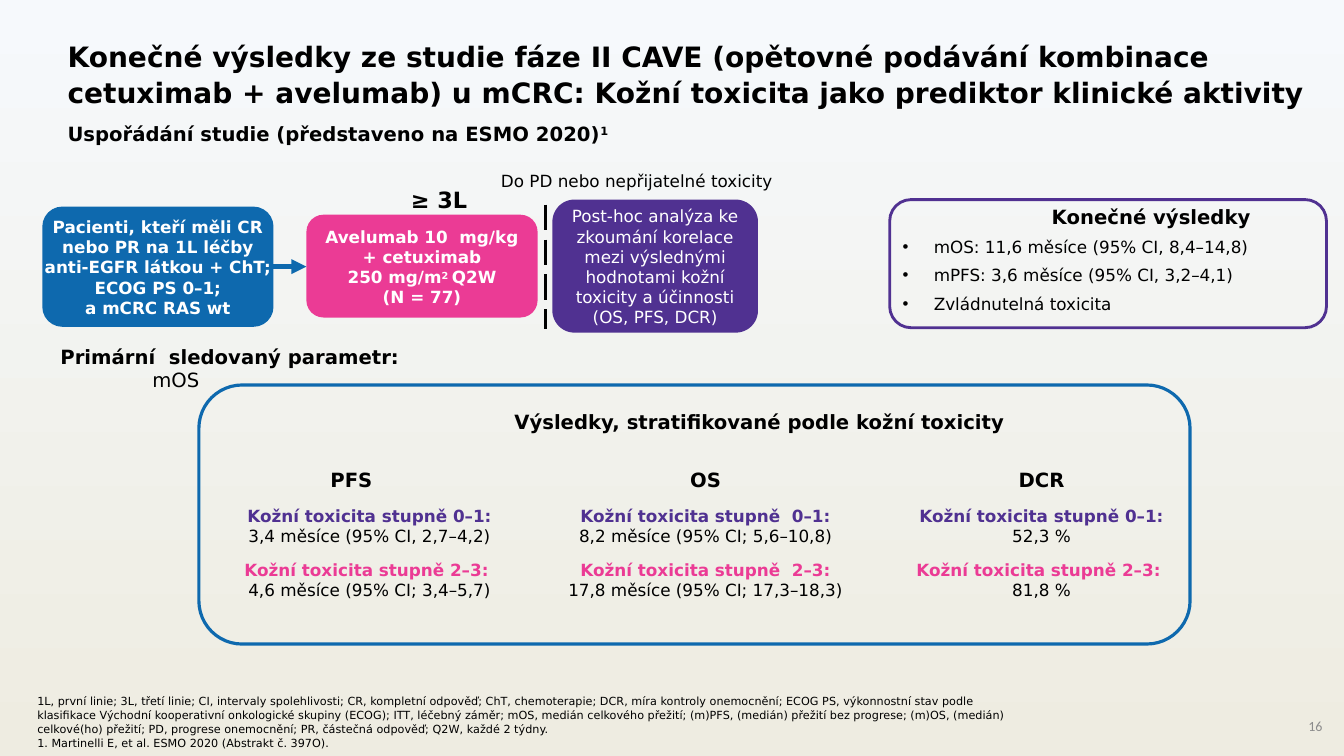
from dataclasses import dataclass
from lxml.etree import SubElement
from pptx import Presentation
from pptx.dml.color import RGBColor
from pptx.enum.dml import MSO_LINE
from pptx.enum.shapes import MSO_CONNECTOR, MSO_SHAPE as SHAPE
from pptx.enum.text import MSO_ANCHOR as ANCHOR, MSO_AUTO_SIZE, PP_ALIGN as ALIGN
from pptx.oxml.ns import qn
from pptx.util import Inches, Pt


@dataclass(frozen=True)
class Theme:
    font: str = "DejaVu Sans"
    number_font: str = "Calibri"
    black: str = "000000"
    white: str = "FFFFFF"
    blue: str = "0E69AE"
    pink: str = "EB3B95"
    purple: str = "503191"
    grey: str = "8C8C8C"
    sky: str = "F6F9FC"
    sand: str = "EEECE1"
    title: int = 20
    label: int = 16
    heading: int = 14
    body: int = 12
    number: int = 10
    note: int = 8


THEME = Theme()

# Content: a tuple inside a paragraph is (superscript text, baseline in percent)
TITLE = ("Konečné výsledky ze studie fáze II CAVE (opětovné podávání kombinace "
         "cetuximab + avelumab) u mCRC: Kožní toxicita jako prediktor klinické aktivity")
SUBTITLE = ["Uspořádání studie (představeno na ESMO 2020)", ("1", 30)]
# Areas are left, top, width, height in percent of the slide
CARDS = [
    ((3.15, 27.33, 17.2, 15.9), THEME.blue, True,
     [["Pacienti, kteří měli CR\vnebo PR na 1L léčby\vanti-EGFR látkou + ChT;\vECOG PS 0–1;"],
      ["a mCRC RAS wt"]]),
    ((22.8, 28.4, 17.2, 13.6), THEME.pink, True,
     [["Avelumab 10  mg/kg"], ["+ cetuximab"], ["250 mg/m", ("2 ", 24), "Q2W"], ["(N = 77)"]]),
    ((41.1, 26.4, 15.3, 17.6), THEME.purple, False,
     [["Post-hoc analýza ke\vzkoumání korelace\vmezi výslednými\vhodnotami kožní\v"
       "toxicity a účinnosti\v(OS, PFS, DCR)"]]),
]
FRAMES = [((66.2, 26.4, 32.5, 16.95), THEME.purple, 2.04),
          ((14.8, 50.93, 73.75, 34.27), THEME.blue, 2.28)]
FINAL_RESULTS = ["mOS: 11,6 měsíce (95% CI, 8,4–14,8)",
                 "mPFS: 3,6 měsíce (95% CI, 3,2–4,1)",
                 "Zvládnutelná toxicita"]
# Name, mild label and value, severe label and value, right margin of the name
OUTCOMES = [
    ("PFS", "Kožní toxicita stupně 0–1:", "3,4 měsíce (95% CI, 2,7–4,2)",
     "Kožní toxicita stupně 2–3: ", "4,6 měsíce (95% CI; 3,4–5,7)", 0.36),
    ("OS", "Kožní toxicita stupně  0–1:", "8,2 měsíce (95% CI; 5,6–10,8)",
     "Kožní toxicita stupně  2–3:", "17,8 měsíce (95% CI; 17,3–18,3)", 0),
    ("DCR", "Kožní toxicita stupně 0–1:", "52,3 %",
     "Kožní toxicita stupně 2–3: ", "81,8 %", 0),
]
NOTES = [
    "1L, první linie; 3L, třetí linie; CI, intervaly spolehlivosti; CR, kompletní odpověď; "
    "ChT, chemoterapie; DCR, míra kontroly onemocnění; ECOG PS, výkonnostní stav podle "
    "klasifikace Východní kooperativní onkologické skupiny (ECOG); ITT, léčebný záměr; mOS, "
    "medián celkového přežití; (m)PFS, (medián) přežití bez progrese; (m)OS, (medián) "
    "celkové(ho) přežití; PD, progrese onemocnění; PR, částečná odpověď; Q2W, každé 2 týdny.",
    "1. Martinelli E, et al. ESMO 2020 (Abstrakt č. 397O).",
]

deck = Presentation()
deck.slide_width, deck.slide_height = Inches(13.33), Inches(7.5)
page = deck.slides.add_slide(deck.slide_layouts[1])


def across(share):
    return round(deck.slide_width * share / 100)


def down(share):
    return round(deck.slide_height * share / 100)


def place(area):
    left, top, width, height = area
    return across(left), down(top), across(width), down(height)


def write(box, paragraphs, wrap=True, anchor=ANCHOR.TOP, top=0.01):
    """Fill a box with (parts, format) paragraphs."""
    frame = box.text_frame
    frame.word_wrap, frame.auto_size = wrap, MSO_AUTO_SIZE.NONE
    frame.vertical_anchor = anchor
    frame.margin_left = frame.margin_right = frame.margin_bottom = 0
    frame.margin_top = Inches(top)
    for index, (parts, style) in enumerate(paragraphs):
        para = frame.add_paragraph() if index else frame.paragraphs[0]
        para.alignment = style.get("align", ALIGN.LEFT)
        para.space_before = Pt(style.get("before", 0))
        para.line_spacing = style.get("spacing", 1.0)
        props = para._p.get_or_add_pPr()
        for key in ("marL", "marR", "indent"):
            props.set(key, str(Inches(style.get(key, 0))))
        if "bullet" in style:
            SubElement(props, qn("a:buChar")).set("char", style["bullet"])
        else:
            SubElement(props, qn("a:buNone"))
        for part in [parts] if isinstance(parts, str) else parts:
            text, baseline = (part, 0) if isinstance(part, str) else part
            for number, line in enumerate(text.split("\v")):
                if number:
                    para.add_line_break()
                span = para.add_run()
                span.text = line
                if baseline:
                    span.font._element.set("baseline", str(baseline * 1000))
        font = para.font
        font.name = style.get("font", THEME.font)
        font.size = Pt(style.get("size", THEME.body))
        font.bold = style.get("bold", False)
        font.color.rgb = RGBColor.from_string(style.get("color", THEME.black))


def add_text(area, *paragraphs):
    write(page.shapes.add_textbox(*place(area)), paragraphs)


def fill_placeholder(box, area, paragraphs, top=0.01):
    box.left, box.top, box.width, box.height = place(area)
    write(box, paragraphs, top=top)


def add_rounded(area):
    box = page.shapes.add_shape(SHAPE.ROUNDED_RECTANGLE, *place(area))
    box.shadow.inherit = False
    return box


def add_line(start, end, color, width):
    line = page.shapes.add_connector(MSO_CONNECTOR.STRAIGHT, across(start[0]), down(start[1]),
                                     across(end[0]), down(end[1]))
    line.line.color.rgb = RGBColor.from_string(color)
    line.line.width = Pt(width)
    SubElement(line._element.spPr, qn("a:effectLst"))
    return line


# Background
backdrop = page.background.fill
backdrop.gradient()
backdrop.gradient_angle = 270
for stop, color in zip(backdrop.gradient_stops, (THEME.sky, THEME.sand)):
    stop.color.rgb = RGBColor.from_string(color)
backdrop.gradient_stops[0].position, backdrop.gradient_stops[1].position = 0, 1

# Title and final results
bold_heading = dict(size=THEME.heading, bold=True)
title_style = dict(bold=True, marL=0.05, spacing=Pt(25.2), before=0.9)
fill_placeholder(page.shapes.title, (4.65, 4.93, 95.6, 13.7),
                 [(TITLE, dict(title_style, size=THEME.title)),
                  (SUBTITLE, dict(title_style, size=THEME.heading))])
bullet_style = dict(bullet="•", marL=0.33, indent=-0.31, before=6)
fill_placeholder(page.placeholders[1], (67, 25.33, 27.5, 16.5),
                 [("Konečné výsledky", dict(bold_heading, marL=1.5))]
                 + [(result, bullet_style) for result in FINAL_RESULTS], top=0.13)

# Study design
for area, color, bold, paragraphs in CARDS:
    card = add_rounded(area)
    card.fill.solid()
    card.fill.fore_color.rgb = RGBColor.from_string(color)
    card.line.fill.background()
    style = dict(align=ALIGN.CENTER, color=THEME.white, bold=bold)
    write(card, [(parts, style) for parts in paragraphs], wrap=False, anchor=ANCHOR.MIDDLE)
arrow = add_line((20.35, 35.27), (22.8, 35.27), THEME.blue, 3.6)
SubElement(arrow.line._get_or_add_ln(), qn("a:tailEnd")).set("type", "triangle")
divider = add_line((40.57, 27.07), (40.57, 43.47), THEME.black, 2.28)
divider.line.dash_style = MSO_LINE.LONG_DASH
add_text((30.5, 24.53, 5.9, 3.7), ("≥ 3L", dict(size=THEME.label, bold=True, marL=0.01)))
add_text((37.2, 22.4, 20.7, 2.9), ("Do PD nebo nepřijatelné toxicity", dict(marL=0.01)))
add_text((3.98, 45.47, 26.25, 6.67),
         ("Primární  sledovaný parametr:", dict(bold_heading, align=ALIGN.CENTER)),
         ("mOS", dict(size=THEME.heading, marL=0.98)))

# Outlined frames
for area, color, width in FRAMES:
    outline = add_rounded(area)
    outline.fill.background()
    outline.line.color.rgb = RGBColor.from_string(color)
    outline.line.width = Pt(width)

# Outcomes by skin toxicity, one column per quarter of the slide
add_text((38.2, 54.1, 39.3, 3.33),
         ("Výsledky, stratifikované podle kožní toxicity", dict(bold_heading, marL=0.01)))
FIRST_CENTRE, STEP, COLUMN = 27.5, 25, 22.6
centred = dict(align=ALIGN.CENTER)
mild = dict(centred, bold=True, before=10, color=THEME.purple)
severe = dict(mild, color=THEME.pink)
for index, (name, mild_label, mild_value, severe_label, severe_value, margin) in enumerate(OUTCOMES):
    left = FIRST_CENTRE + STEP * index - COLUMN / 2
    add_text((left, 61.73, COLUMN, 17.8),
             (name, dict(bold_heading, align=ALIGN.CENTER, marR=margin)),
             (mild_label, mild), (mild_value, centred),
             (severe_label, severe), (severe_value, centred))

# Footnotes and page number
add_text((2.7, 91.6, 72.6, 7.6),
         *[(note, dict(size=THEME.note, marL=0.01, spacing=1.05 - 0.05 * index, before=0.5))
           for index, note in enumerate(NOTES)])
add_text((75.4, 94.8, 23, 2.3),
         ("16", dict(size=THEME.number, font=THEME.number_font, color=THEME.grey,
                     align=ALIGN.RIGHT)))

deck.save("out.pptx")
